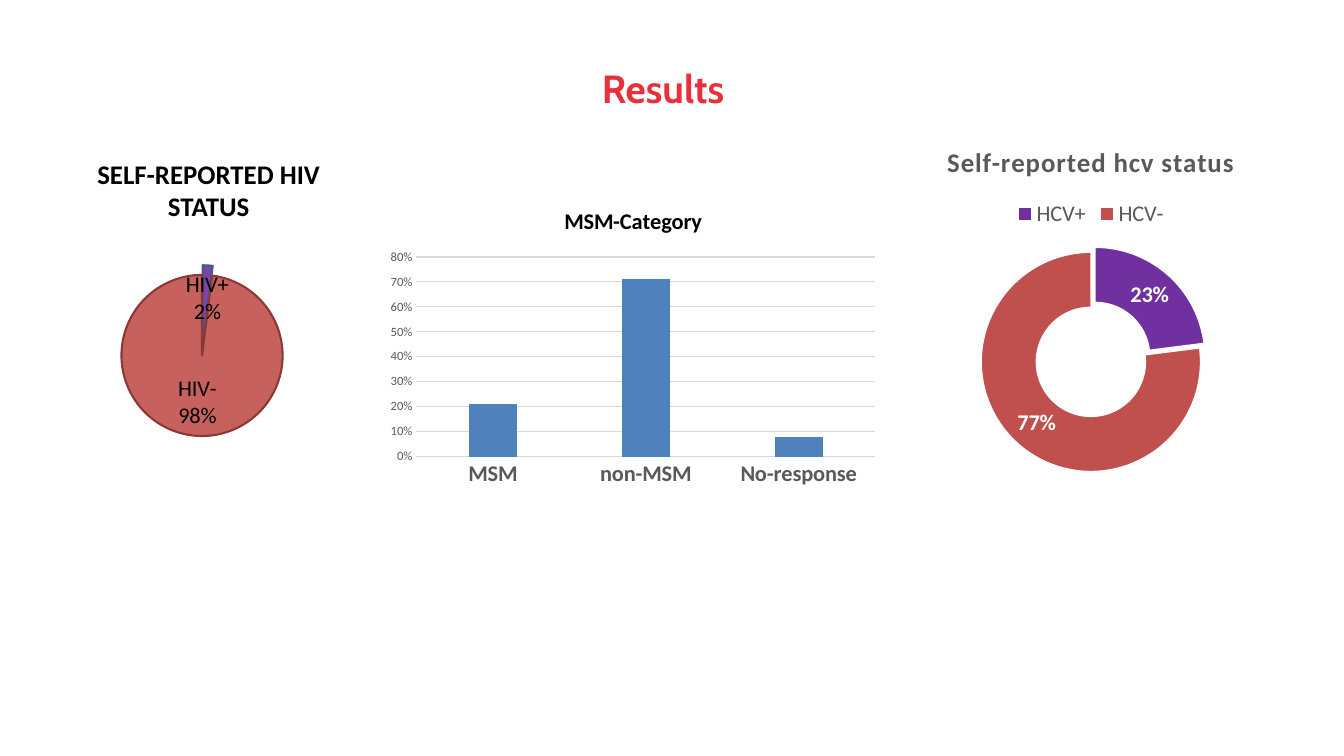
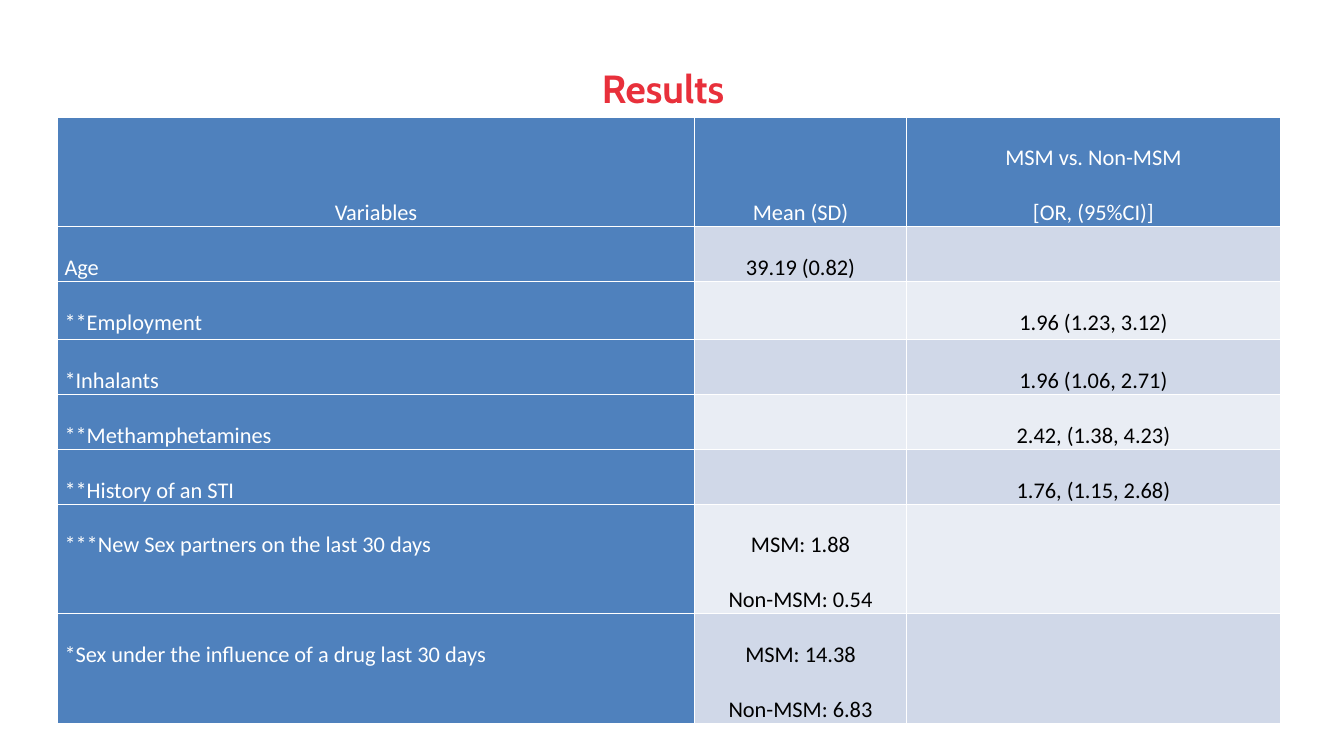
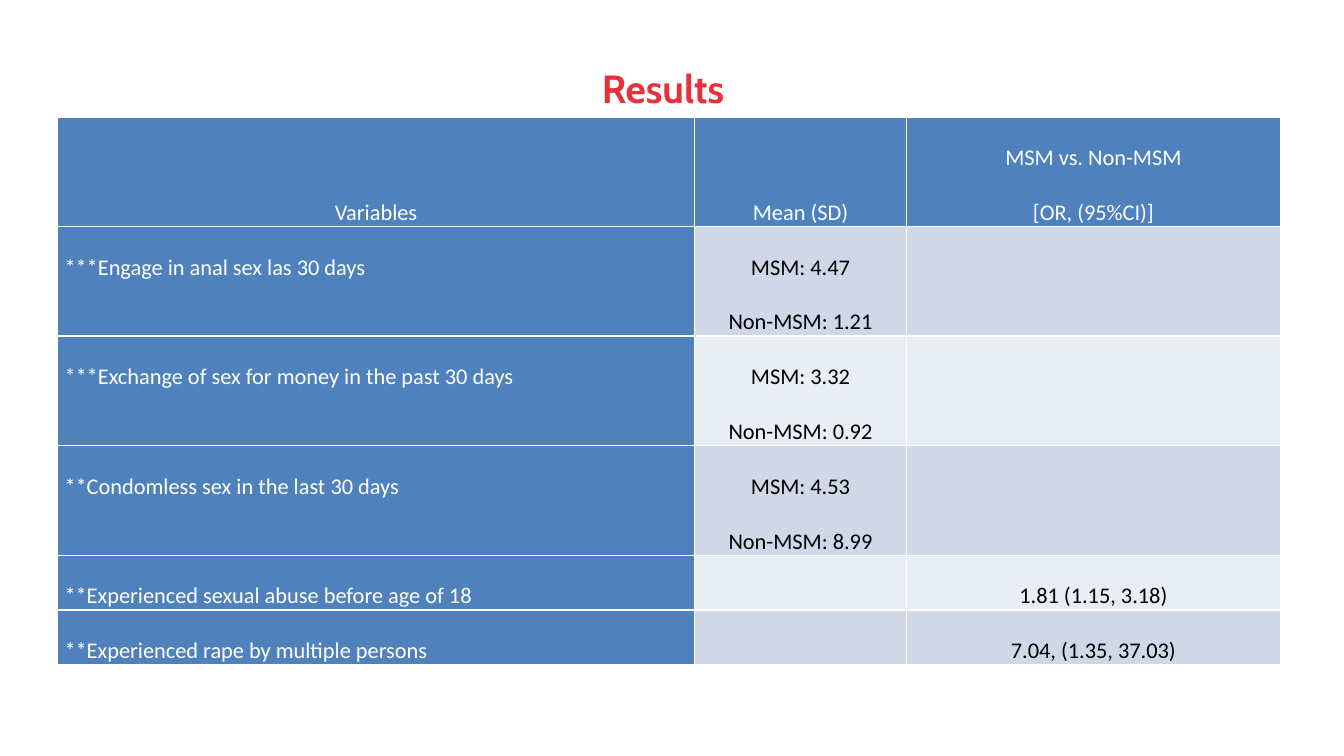
from dataclasses import dataclass

from lxml import etree
from pptx import Presentation
from pptx.chart.data import CategoryChartData
from pptx.dml.color import RGBColor
from pptx.enum import chart as ch, text
from pptx.oxml import ns
from pptx.util import Inches, Pt


@dataclass(frozen=True)
class Theme:
    title_font: str = "Cabin"
    font: str = "Calibri"
    red: str = "E8303B"
    black: str = "000000"
    white: str = "FFFFFF"
    grey: str = "595959"
    grid: str = "D9D9D9"
    blue: str = "4F81BD"
    navy: str = "385D8A"
    purple: str = "7030A0"
    brick: str = "C0504D"
    maroon: str = "8C3836"
    bands: tuple = ("D0D8E8", "E9EDF4")
    title: float = 28
    heading: float = 19.2
    body: float = 16
    axis: float = 9


T = Theme()
TITLE = "Results"

# Content: charts
HIV_HEADING = "SELF-REPORTED HIV STATUS"
HIV = {"HIV+": 2, "HIV-": 98}
MSM_TITLE = "MSM-Category"
MSM = {"MSM": 0.21, "non-MSM": 0.71, "No-response": 0.08}
HCV_TITLE = "Self-reported hcv status"
HCV = {"HCV+": 23, "HCV-": 77}

# Content: tables, where a line break starts a new paragraph
HEADER = ("Variables", "Mean (SD)", "MSM vs. Non-MSM\n[OR, (95%CI)]")
TABLES = [
    [
        ("Age", "39.19 (0.82)", ""),
        ("**Employment", "", "1.96 (1.23, 3.12)"),
        ("*Inhalants", "", "1.96 (1.06, 2.71)"),
        ("**Methamphetamines", "", "2.42, (1.38, 4.23)"),
        ("**History of an STI", "", "1.76, (1.15, 2.68)"),
        ("***New Sex partners on the last 30 days", "MSM: 1.88\nNon-MSM: 0.54", ""),
        ("*Sex under the influence of a drug last 30 days",
         "MSM: 14.38\nNon-MSM: 6.83", ""),
    ],
    [
        ("***Engage in anal sex las 30 days", "MSM: 4.47\nNon-MSM: 1.21", ""),
        ("***Exchange of sex for money in the past 30 days",
         "MSM: 3.32\nNon-MSM: 0.92", ""),
        ("**Condomless sex in the last 30 days", "MSM: 4.53\nNon-MSM: 8.99", ""),
        ("**Experienced sexual abuse before age of 18", "", "1.81 (1.15, 3.18)"),
        ("**Experienced rape by multiple persons", "", "7.04, (1.35, 37.03)"),
    ],
]

# Geometry in inches
TITLE_BOX = (5.87, 0.55, 1.6, 0.61)
HIV_HEADING_BOX = (0.47, 1.51, 3.2, 0.75)
HIV_BOX = (0.23, 2.29, 3.55, 2.19)
MSM_BOX = (3.78, 1.89, 5, 3)
HCV_BOX = (8.78, 1.25, 4.08, 3.63)
TABLE_LEFT, TABLE_TOP = 0.57, 1.16
COLUMNS = (6.32, 2.1, 3.71)
LINE_HEIGHT = 0.54
TALL_ROWS = {"**Employment": 0.58}


def rgb(value):
    return RGBColor.from_string(value)


def box(values):
    return [Inches(v) for v in values]


def style(font, size, color, bold=False, name=T.font):
    font.name, font.size, font.bold = name, Pt(size), bold
    font.color.rgb = rgb(color)


def new_slide(prs):
    slide = prs.slides.add_slide(prs.slide_layouts[5])
    title = slide.shapes.title
    title.left, title.top, title.width, title.height = box(TITLE_BOX)
    tf = title.text_frame
    tf.text = TITLE
    tf.vertical_anchor = text.MSO_ANCHOR.BOTTOM
    tf.paragraphs[0].alignment = text.PP_ALIGN.LEFT
    style(tf.paragraphs[0].runs[0].font, T.title, T.red, True, T.title_font)
    return slide


# Charts
def add_chart(slide, kind, place, values, title=None):
    data = CategoryChartData()
    data.categories = list(values)
    data.add_series("Series 1", list(values.values()))
    chart = slide.shapes.add_chart(kind, *box(place), data).chart
    style(chart.font, T.body, T.black)
    chart.has_legend = False
    chart.has_title = title is not None
    if title:
        chart.chart_title.text_frame.text = title
    return chart, chart.plots[0]


def title_font(chart):
    return chart.chart_title.text_frame.paragraphs[0].runs[0].font


def color_points(plot, fills, lines, width, explosion):
    """Colour each slice and pull the first one out."""
    plot.vary_by_categories = True
    for i, (fill, line) in enumerate(zip(fills, lines)):
        fmt = plot.series[0].points[i].format
        fmt.fill.solid()
        fmt.fill.fore_color.rgb = rgb(fill)
        fmt.line.color.rgb = rgb(line)
        fmt.line.width = Pt(width)
    first = plot.series[0]._element.find(ns.qn("c:dPt"))
    exploded = etree.Element(ns.qn("c:explosion"), val=str(explosion))
    first.find(ns.qn("c:spPr")).addprevious(exploded)


def percent_labels(plot, color, bold=False):
    plot.has_data_labels = True
    labels = plot.data_labels
    labels.show_percentage, labels.show_value = True, False
    labels.number_format, labels.number_format_is_linked = "0%", False
    style(labels.font, T.body, color, bold)
    return labels


def place_plot(chart, **shares):
    """Set the inner plot area as shares of the chart's size."""
    area = chart._chartSpace.chart.plotArea
    for old in area.findall(ns.qn("c:layout")):
        area.remove(old)
    layout = etree.Element(ns.qn("c:layout"))
    manual = etree.SubElement(layout, ns.qn("c:manualLayout"))
    settings = {"layoutTarget": "inner", "xMode": "edge", "yMode": "edge", **shares}
    for tag, value in settings.items():
        etree.SubElement(manual, ns.qn("c:" + tag), val=str(value))
    area.insert(0, layout)


def add_hiv_pie(slide):
    tf = slide.shapes.add_textbox(*box(HIV_HEADING_BOX)).text_frame
    tf.word_wrap = True
    tf.text = HIV_HEADING
    tf.paragraphs[0].alignment = text.PP_ALIGN.CENTER
    style(tf.paragraphs[0].runs[0].font, T.heading, T.black, True)

    chart, plot = add_chart(slide, ch.XL_CHART_TYPE.PIE, HIV_BOX, HIV)
    color_points(plot, (T.purple, T.brick), (T.navy, T.maroon), 1.5, 12)
    for color in plot.series[0]._element.findall(
            "/".join(ns.qn(t) for t in ("c:dPt", "c:spPr", "a:solidFill", "a:srgbClr"))):
        etree.SubElement(color, ns.qn("a:alpha"), val="90000")
    labels = percent_labels(plot, T.black)
    labels.show_category_name = True
    labels.position = ch.XL_LABEL_POSITION.INSIDE_END
    separator = etree.Element(ns.qn("c:separator"))
    separator.text = "\n"
    labels._element.find(ns.qn("c:showBubbleSize")).addnext(separator)
    place_plot(chart, x=0.27, y=0.2, w=0.46, h=0.73)


def add_msm_columns(slide):
    chart, plot = add_chart(slide, ch.XL_CHART_TYPE.COLUMN_CLUSTERED, MSM_BOX,
                            MSM, MSM_TITLE)
    style(title_font(chart), T.body, T.black, True)
    plot.gap_width, plot.overlap, plot.vary_by_categories = 219, -27, False
    fill = plot.series[0].format.fill
    fill.solid()
    fill.fore_color.rgb = rgb(T.blue)

    cats, vals = chart.category_axis, chart.value_axis
    style(cats.tick_labels.font, T.body, T.grey, True)
    style(vals.tick_labels.font, T.axis, T.grey)
    for axis in (cats, vals):
        axis.major_tick_mark = ch.XL_TICK_MARK.NONE
    for line in (cats.format.line, vals.major_gridlines.format.line):
        line.color.rgb = rgb(T.grid)
        line.width = Pt(0.75)
    vals.format.line.fill.background()
    vals.minimum_scale, vals.maximum_scale, vals.major_unit = 0, 0.8, 0.1
    vals.tick_labels.number_format = "0%"
    vals.tick_labels.number_format_is_linked = False
    place_plot(chart, x=0.07, y=0.22, w=0.91, h=0.66)


def add_hcv_doughnut(slide):
    chart, plot = add_chart(slide, ch.XL_CHART_TYPE.DOUGHNUT, HCV_BOX, HCV, HCV_TITLE)
    font = title_font(chart)
    style(font, T.heading, T.grey, True)
    font._element.set("spc", "50")
    color_points(plot, (T.purple, T.brick), (T.white, T.white), 0.75, 12)
    percent_labels(plot, T.white, True)
    chart.has_legend = True
    chart.legend.position = ch.XL_LEGEND_POSITION.TOP
    chart.legend.include_in_layout = False
    style(chart.legend.font, T.body, T.grey)


# Tables
def fill_cell(cell, words, fill, color, centred, anchor):
    cell.fill.solid()
    cell.fill.fore_color.rgb = rgb(fill)
    cell.margin_left = cell.margin_right = Inches(0.07)
    cell.margin_top = cell.margin_bottom = 0
    cell.vertical_anchor = anchor
    cell.text_frame.text = words
    for p in cell.text_frame.paragraphs:
        p.line_spacing = 2
        p.alignment = text.PP_ALIGN.CENTER if centred else text.PP_ALIGN.LEFT
        style(p.font, T.body, color)
        for r in p.runs:
            style(r.font, T.body, color)


def add_results_table(slide, body):
    rows = [HEADER, *body]
    heights = [TALL_ROWS.get(row[0], LINE_HEIGHT * max(c.count("\n") + 1 for c in row))
               for row in rows]
    place = (TABLE_LEFT, TABLE_TOP, sum(COLUMNS), sum(heights))
    table = slide.shapes.add_table(len(rows), len(COLUMNS), *box(place)).table
    table.first_col = True
    for column, width in zip(table.columns, COLUMNS):
        column.width = Inches(width)
    for i, row in enumerate(rows):
        table.rows[i].height = Inches(heights[i])
        anchor = text.MSO_ANCHOR.TOP if i else text.MSO_ANCHOR.BOTTOM
        for j, words in enumerate(row):
            heading = i == 0 or j == 0
            fill_cell(table.cell(i, j), words,
                      T.blue if heading else T.bands[(i - 1) % 2],
                      T.white if heading else T.black,
                      i == 0 or j > 0, anchor)


def main():
    prs = Presentation()
    prs.slide_width, prs.slide_height = Inches(13.33), Inches(7.5)
    charts = new_slide(prs)
    add_hiv_pie(charts)
    add_msm_columns(charts)
    add_hcv_doughnut(charts)
    for body in TABLES:
        add_results_table(new_slide(prs), body)
    prs.save("out.pptx")


if __name__ == "__main__":
    main()
